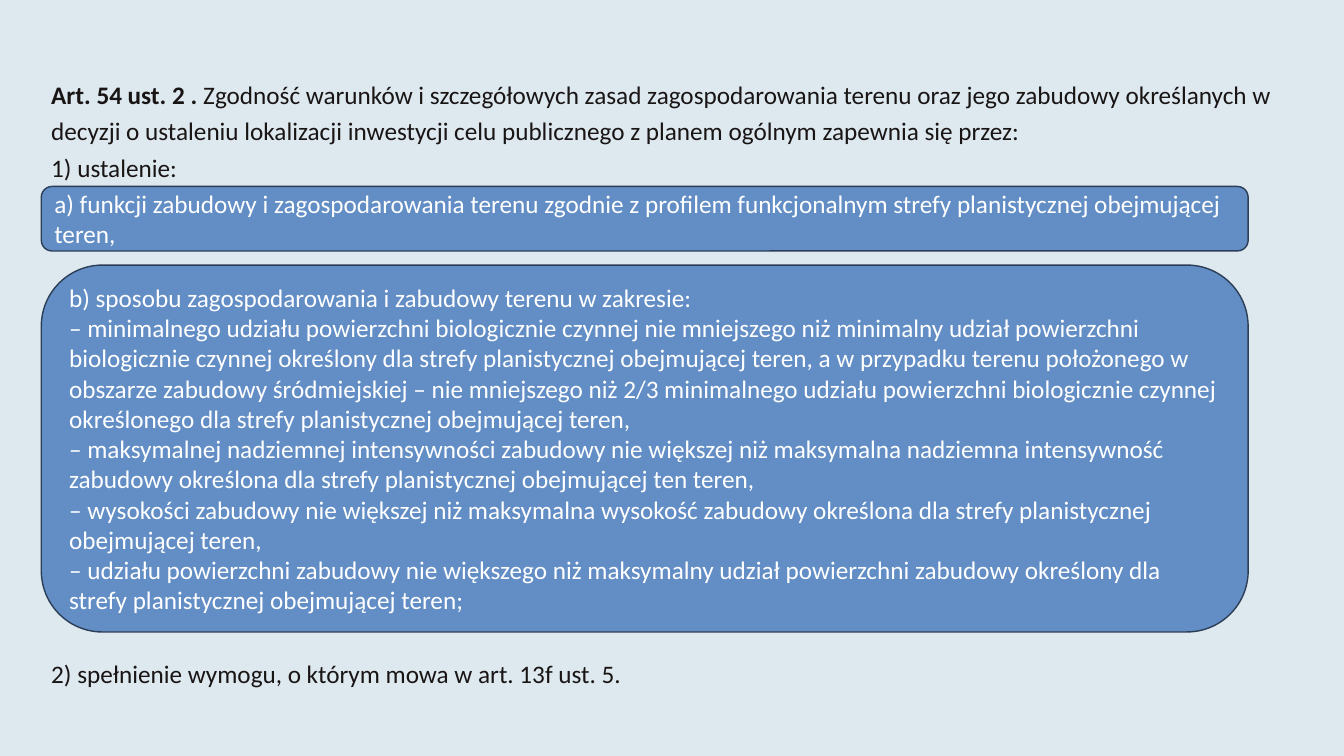
from dataclasses import dataclass

from pptx import Presentation
from pptx.dml.color import RGBColor
from pptx.enum.shapes import MSO_SHAPE
from pptx.enum.text import MSO_ANCHOR, PP_ALIGN
from pptx.shapes.autoshape import Shape
from pptx.slide import Slide
from pptx.util import Inches, Pt

BACKGROUND = RGBColor(0xDE, 0xE8, 0xEF)
INK = RGBColor(0x19, 0x15, 0x15)
PANEL_FILL = RGBColor(0x62, 0x8E, 0xC5)
PANEL_LINE = RGBColor(0x2B, 0x3E, 0x56)
WHITE = RGBColor(0xFF, 0xFF, 0xFF)

LEFT = 0.41
TEXT_WIDTH = 12.6
PANEL_WIDTH = 11.97


@dataclass(frozen=True)
class Span:
    text: str
    bold: bool = False


@dataclass(frozen=True)
class Block:
    top: float
    height: float
    paragraphs: list[list[Span]]


INTRODUCTION = Block(0.68, 1.17, [
    [
        Span("Art. 54 ust. 2 . ", bold=True),
        Span("Zgodność warunków i szczegółowych zasad zagospodarowania terenu oraz jego "
             "zabudowy określanych w decyzji o ustaleniu lokalizacji inwestycji celu "
             "publicznego z planem ogólnym zapewnia się przez:"),
    ],
    [Span("1) ustalenie:")],
])
REQUIREMENT = Block(6.42, 0.44, [
    [Span("2) spełnienie wymogu, o którym mowa w art. 13f ust. 5.")],
])
BUILDING_FUNCTION = Block(1.85, 0.64, [
    [Span("a) funkcji zabudowy i zagospodarowania terenu zgodnie z profilem funkcjonalnym "
          "strefy planistycznej obejmującej teren,")],
])
LAND_USE = Block(2.63, 3.64, [
    [Span("b) sposobu zagospodarowania i zabudowy terenu w zakresie:")],
    [Span("– minimalnego udziału powierzchni biologicznie czynnej nie mniejszego niż "
          "minimalny udział powierzchni biologicznie czynnej określony dla strefy "
          "planistycznej obejmującej teren, a w przypadku terenu położonego w obszarze "
          "zabudowy śródmiejskiej – nie mniejszego niż 2/3 minimalnego udziału powierzchni "
          "biologicznie czynnej określonego dla strefy planistycznej obejmującej teren,")],
    [Span("– maksymalnej nadziemnej intensywności zabudowy nie większej niż maksymalna "
          "nadziemna intensywność zabudowy określona dla strefy planistycznej obejmującej "
          "ten teren,")],
    [Span("– wysokości zabudowy nie większej niż maksymalna wysokość zabudowy określona "
          "dla strefy planistycznej obejmującej teren,")],
    [Span("– udziału powierzchni zabudowy nie większego niż maksymalny udział powierzchni "
          "zabudowy określony dla strefy planistycznej obejmującej teren;")],
])


def write_paragraphs(box: Shape, block: Block, color: RGBColor, spacing: float) -> None:
    frame = box.text_frame
    frame.word_wrap = True
    for index, spans in enumerate(block.paragraphs):
        para = frame.paragraphs[0] if index == 0 else frame.add_paragraph()
        para.alignment = PP_ALIGN.LEFT
        para.line_spacing = spacing
        for span in spans:
            run = para.add_run()
            run.text = span.text
            run.font.name = "Calibri"
            run.font.size = Pt(18)
            run.font.bold = span.bold
            run.font.color.rgb = color


def add_text(page: Slide, block: Block) -> None:
    box = page.shapes.add_textbox(
        Inches(LEFT), Inches(block.top), Inches(TEXT_WIDTH), Inches(block.height))
    write_paragraphs(box, block, INK, 1.2)


def add_panel(page: Slide, block: Block) -> None:
    panel = page.shapes.add_shape(
        MSO_SHAPE.ROUNDED_RECTANGLE,
        Inches(LEFT), Inches(block.top), Inches(PANEL_WIDTH), Inches(block.height))
    panel.shadow.inherit = False
    panel.fill.solid()
    panel.fill.fore_color.rgb = PANEL_FILL
    panel.line.color.rgb = PANEL_LINE
    panel.line.width = Pt(1)
    panel.text_frame.vertical_anchor = MSO_ANCHOR.MIDDLE
    write_paragraphs(panel, block, WHITE, 1.0)


def main() -> None:
    deck = Presentation()
    deck.slide_width = Inches(13.33)
    deck.slide_height = Inches(7.5)
    page = deck.slides.add_slide(deck.slide_layouts.get_by_name("Blank"))
    page.background.fill.solid()
    page.background.fill.fore_color.rgb = BACKGROUND

    add_text(page, INTRODUCTION)
    add_panel(page, BUILDING_FUNCTION)
    add_panel(page, LAND_USE)
    add_text(page, REQUIREMENT)
    deck.save("out.pptx")


if __name__ == "__main__":
    main()
